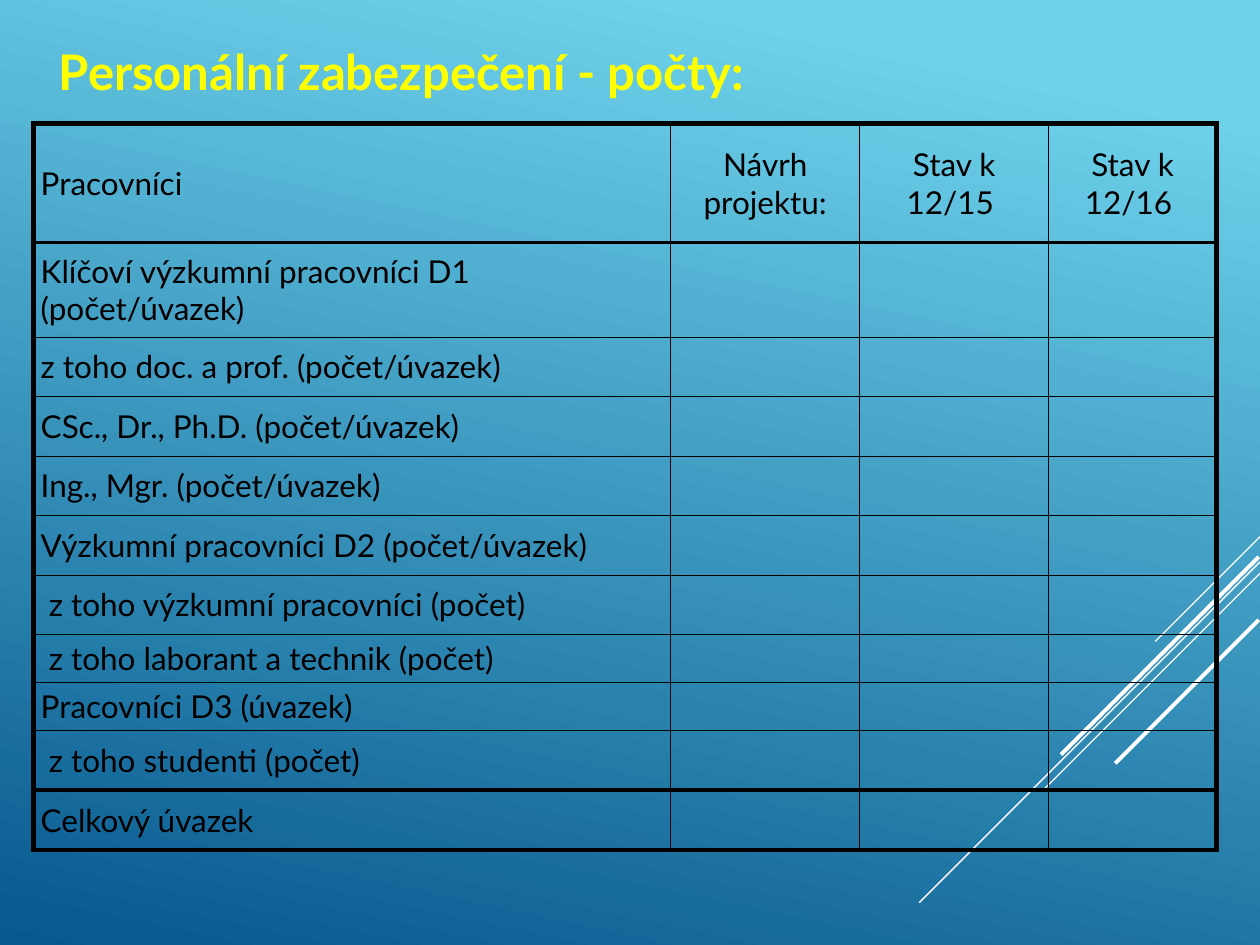
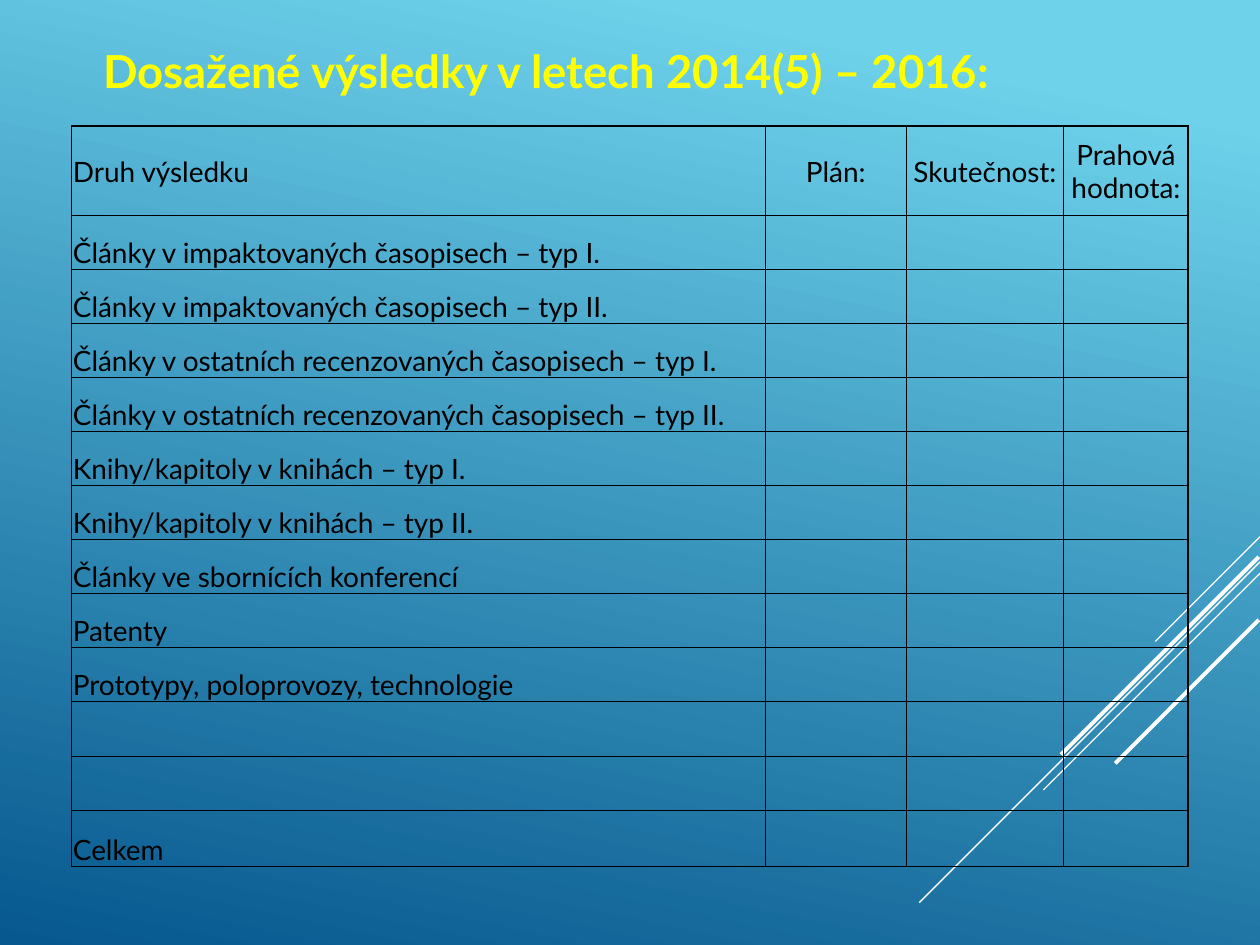
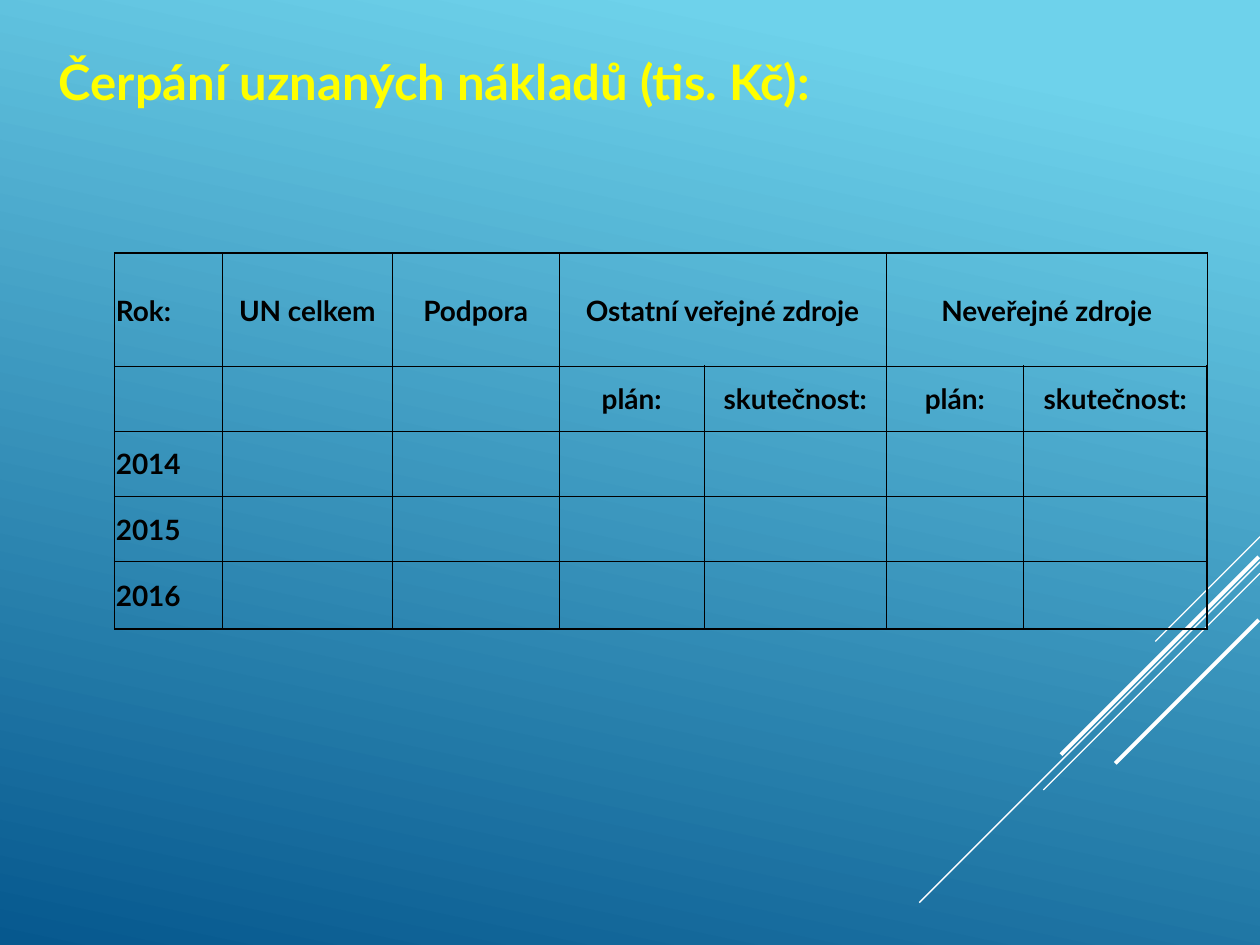
from dataclasses import dataclass

import pptx
import pptx.dml.color
import pptx.enum.shapes
import pptx.enum.text
import pptx.oxml
import pptx.oxml.ns
import pptx.presentation
import pptx.shapes.autoshape
import pptx.slide
import pptx.table
import pptx.util

Pt = pptx.util.Pt
RGBColor = pptx.dml.color.RGBColor
ANCHOR = pptx.enum.text.MSO_ANCHOR
ALIGN = pptx.enum.text.PP_ALIGN

SKY = RGBColor(0x6E, 0xD2, 0xEB)
DEEP_BLUE = RGBColor(0x06, 0x58, 0x8E)
WHITE = RGBColor(0xFF, 0xFF, 0xFF)
YELLOW = RGBColor(0xFF, 0xFF, 0x00)
BLACK = RGBColor(0x00, 0x00, 0x00)
FONT = "Lato"
GRID_WIDTH = 0.5


@dataclass(frozen=True)
class Streak:
    right: float
    top: float
    reach: float
    width: float


@dataclass(frozen=True)
class Title:
    text: str
    left: float
    top: float
    width: float
    height: float
    size: float


@dataclass(frozen=True)
class Grid:
    left: float
    top: float
    columns: list[float]
    rows: list[float]
    texts: list[list[str]]
    size: float = 16
    bold: bool = False
    margins: tuple[float, float, float, float] = (0.7, 0.7, 0.7, 0)
    body_anchor: ANCHOR = ANCHOR.MIDDLE
    outer: float = 1
    below_header: float = GRID_WIDTH
    above_total: float = GRID_WIDTH
    header_pairs: tuple[int, ...] = ()


STREAKS = [
    Streak(720, 306.7, 59.8, 0.75),
    Streak(720, 321.1, 194.7, 0.75),
    Streak(720, 327.6, 123.8, 0.75),
    Streak(719.3, 318.2, 113, 2.25),
    Streak(719.3, 354.2, 82, 2.25),
]

STAFF = Grid(
    left=19,
    top=70.6,
    columns=[364.3, 108, 108, 95.8],
    rows=[68, 54] + [34] * 5 + [27.4] * 2 + [34.2] * 2,
    texts=[
        ["Pracovníci", "Návrh projektu:", "Stav k 12/15 ", "Stav k 12/16 "],
        ["Klíčoví výzkumní pracovníci D1 (počet/úvazek)"],
        ["z toho doc. a prof. (počet/úvazek)"],
        ["CSc., Dr., Ph.D. (počet/úvazek)"],
        ["Ing., Mgr. (počet/úvazek)"],
        ["Výzkumní pracovníci D2 (počet/úvazek)"],
        [" z toho výzkumní pracovníci (počet)"],
        [" z toho laborant a technik (počet)"],
        ["Pracovníci D3 (úvazek)"],
        [" z toho studenti (počet)"],
        ["Celkový úvazek"],
    ],
    size=18,
    margins=(4.3, 2.85, 4.3, 2.85),
    outer=3,
    below_header=2.25,
    above_total=3,
)

RESULTS = Grid(
    left=41,
    top=72,
    columns=[396.3, 80.6, 90, 71.1],
    rows=[51] + [30.92] * 11 + [32.4],
    texts=[
        ["Druh výsledku", "Plán:", "Skutečnost:", "Prahová hodnota:"],
        ["Články v impaktovaných časopisech – typ I."],
        ["Články v impaktovaných časopisech – typ II."],
        ["Články v ostatních recenzovaných časopisech – typ I."],
        ["Články v ostatních recenzovaných časopisech – typ II."],
        ["Knihy/kapitoly v knihách – typ I."],
        ["Knihy/kapitoly v knihách – typ II."],
        ["Články ve sbornících konferencí"],
        ["Patenty"],
        ["Prototypy, poloprovozy, technologie"],
        [],
        [],
        ["Celkem"],
    ],
    body_anchor=ANCHOR.BOTTOM,
)

COSTS = Grid(
    left=65.5,
    top=144.7,
    columns=[61.5, 97.2, 95.3, 83, 104, 78.4, 105],
    rows=[64.4] + [37.2] * 3 + [38.9],
    texts=[
        ["Rok:", "UN celkem", "Podpora", "Ostatní veřejné zdroje", "", "Neveřejné zdroje"],
        ["", "", "", "plán:", "skutečnost:", "plán:", "skutečnost:"],
        ["2014"],
        ["2015"],
        ["2016"],
    ],
    bold=True,
    header_pairs=(3, 5),
)

PAGES = [
    (Title("Personální zabezpečení - počty:", 26.6, 16.6, 666, 44.6, 28), STAFF),
    (Title("Dosažené výsledky v letech 2014(5) – 2016:", 51.8, 18, 596.9, 41.8, 26), RESULTS),
    (Title("Čerpání uznaných nákladů (tis. Kč):", 26.6, 22.3, 666, 44.6, 28), COSTS),
]


def paint_background(master: pptx.slide.SlideMaster) -> None:
    fill = master.background.fill
    fill.gradient()
    fill.gradient_angle = 360 - 102
    for stop, position, color in zip(fill.gradient_stops, (0.1, 1), (SKY, DEEP_BLUE)):
        stop.position = position
        stop.color.rgb = color


def draw_streak(slide: pptx.slide.Slide, streak: Streak) -> None:
    line = slide.shapes.add_connector(
        pptx.enum.shapes.MSO_CONNECTOR.STRAIGHT,
        Pt(streak.right),
        Pt(streak.top),
        Pt(streak.right - streak.reach),
        Pt(streak.top + streak.reach),
    )
    line.line.color.rgb = WHITE
    line.line.width = Pt(streak.width)
    properties = line._element.spPr
    properties.append(properties.makeelement(pptx.oxml.ns.qn("a:effectLst"), {}))


def add_run(paragraph, text: str, size: float, color: RGBColor, bold: bool) -> None:
    run = paragraph.add_run()
    run.text = text
    run.font.name = FONT
    run.font.size = Pt(size)
    run.font.bold = bold
    run.font.color.rgb = color


def draw_title(slide: pptx.slide.Slide, title: Title) -> None:
    frame = slide.shapes.add_textbox(
        Pt(title.left), Pt(title.top), Pt(title.width), Pt(title.height)
    ).text_frame
    frame.word_wrap = True
    frame.auto_size = pptx.enum.text.MSO_AUTO_SIZE.SHAPE_TO_FIT_TEXT
    paragraph = frame.paragraphs[0]
    paragraph.line_spacing = 1.1
    paragraph.space_before = paragraph.space_after = Pt(3)
    add_run(paragraph, title.text, title.size, YELLOW, True)


def set_borders(cell: pptx.table._Cell, widths: dict[str, float]) -> None:
    properties = cell._tc.get_or_add_tcPr()
    for side, width in widths.items():
        properties.append(
            pptx.oxml.parse_xml(
                f'<a:ln{side} {pptx.oxml.ns.nsdecls("a")} w="{Pt(width)}">'
                f'<a:solidFill><a:srgbClr val="{BLACK}"/></a:solidFill></a:ln{side}>'
            )
        )


def border_widths(grid: Grid, row: int, column: int) -> dict[str, float]:
    last_row, last_column = len(grid.rows) - 1, len(grid.columns) - 1
    horizontal = {
        0: grid.outer,
        1: grid.below_header,
        last_row: grid.above_total,
        last_row + 1: grid.outer,
    }
    vertical = {0: grid.outer, last_column + 1: grid.outer}
    return {
        "L": vertical.get(column, GRID_WIDTH),
        "R": vertical.get(column + 1, GRID_WIDTH),
        "T": horizontal.get(row, GRID_WIDTH),
        "B": horizontal.get(row + 1, GRID_WIDTH),
    }


def draw_grid(slide: pptx.slide.Slide, grid: Grid) -> None:
    table = slide.shapes.add_table(
        len(grid.rows),
        len(grid.columns),
        Pt(grid.left),
        Pt(grid.top),
        Pt(sum(grid.columns)),
        Pt(sum(grid.rows)),
    ).table
    table.first_row = table.horz_banding = False
    for column, width in zip(table.columns, grid.columns):
        column.width = Pt(width)
    for row, height in zip(table.rows, grid.rows):
        row.height = Pt(height)
    for column in grid.header_pairs:
        table.cell(0, column).merge(table.cell(0, column + 1))

    for row, texts in enumerate(grid.texts):
        for column in range(len(grid.columns)):
            cell = table.cell(row, column)
            set_borders(cell, border_widths(grid, row, column))
            cell.fill.background()
            cell.margin_left, cell.margin_top, cell.margin_right, cell.margin_bottom = map(
                Pt, grid.margins
            )
            cell.vertical_anchor = grid.body_anchor if row else ANCHOR.MIDDLE
            if column < len(texts) and texts[column]:
                paragraph = cell.text_frame.paragraphs[0]
                paragraph.alignment = ALIGN.CENTER if column else ALIGN.LEFT
                add_run(paragraph, texts[column], grid.size, BLACK, grid.bold)


def main() -> None:
    deck = pptx.Presentation()
    deck.slide_width, deck.slide_height = Pt(720), Pt(540)
    paint_background(deck.slide_master)
    for title, grid in PAGES:
        slide = deck.slides.add_slide(deck.slide_layouts[6])
        for streak in STREAKS:
            draw_streak(slide, streak)
        draw_title(slide, title)
        draw_grid(slide, grid)
    deck.save("out.pptx")


if __name__ == "__main__":
    main()
